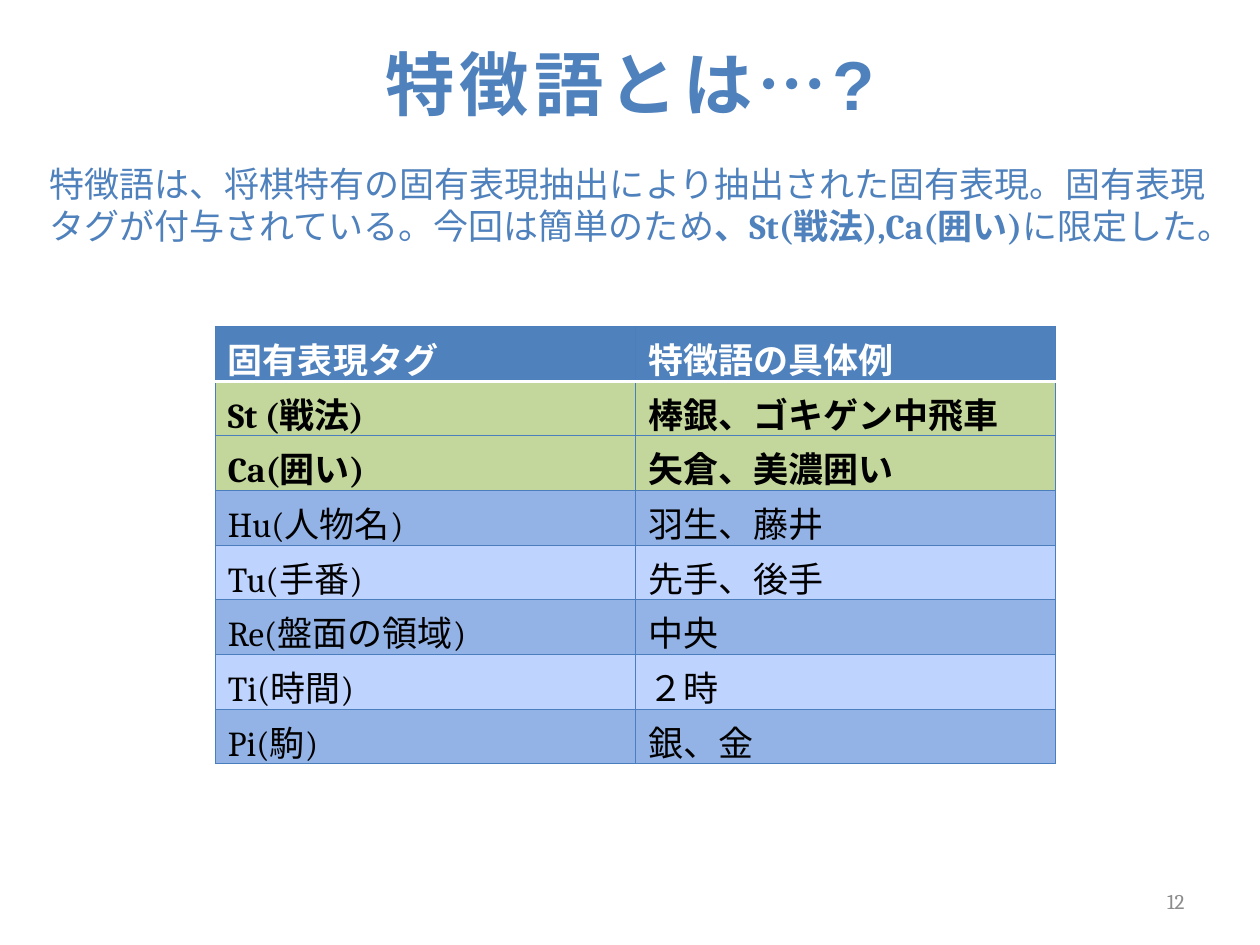
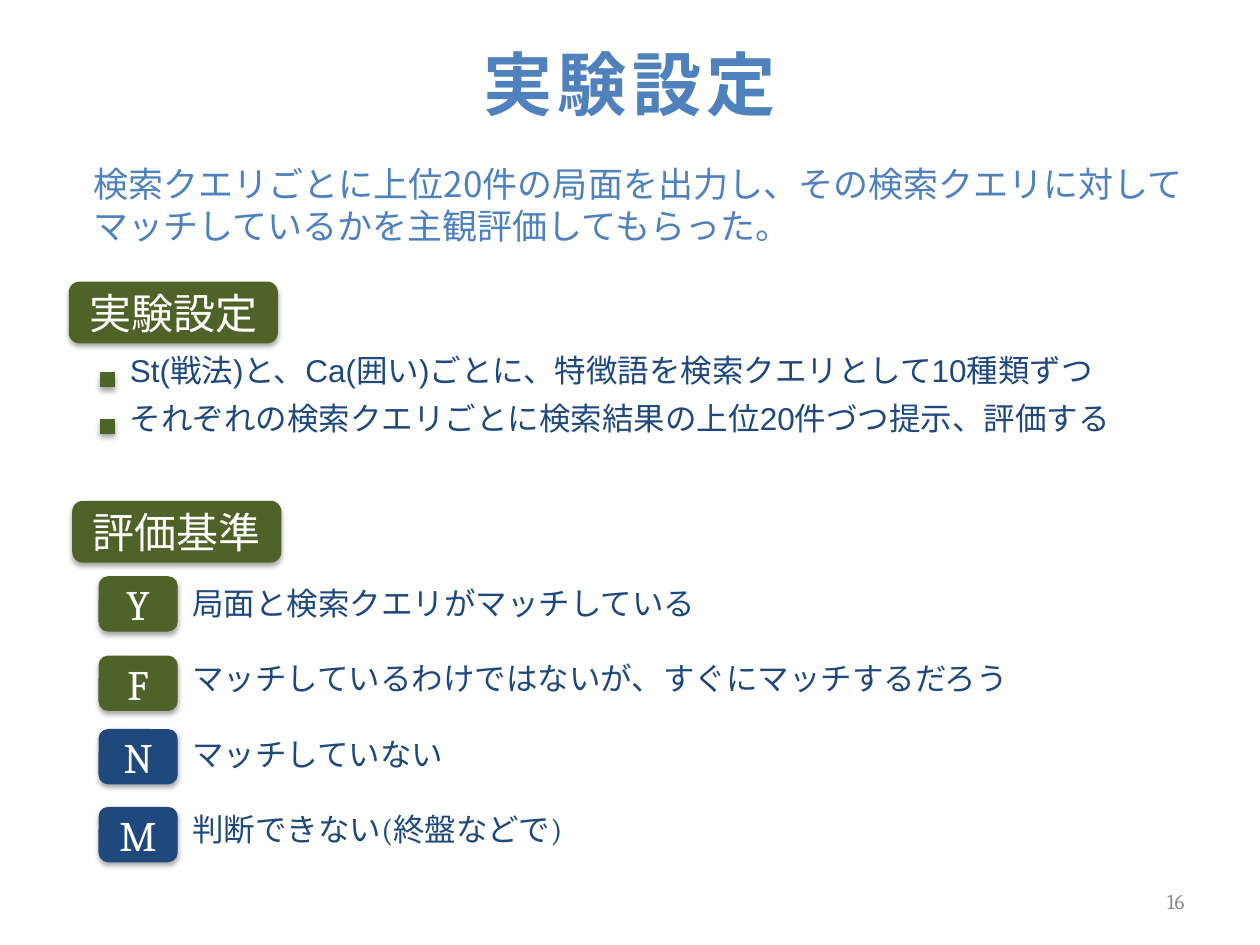
from dataclasses import dataclass

from lxml.etree import SubElement
from pptx import Presentation
from pptx.dml.color import RGBColor
from pptx.enum.lang import MSO_LANGUAGE_ID as Language
from pptx.enum.shapes import MSO_SHAPE as Shape
from pptx.enum.text import MSO_ANCHOR as Anchor, PP_ALIGN as Align
from pptx.oxml.ns import qn
from pptx.util import Cm, Pt


@dataclass(frozen=True)
class Theme:
    blue: str = "4F81BD"
    navy: str = "1F497D"
    green: str = "4F6228"
    light_green: str = "C3D69B"
    row_dark: str = "93B2E5"
    row_light: str = "BFD3FF"
    border: str = "4B7EBC"
    grey: str = "8C8C8C"
    white: str = "FFFFFF"
    black: str = "000000"
    serif: str = "Cambria"
    sans: str = "Arial"
    japanese: str = "Noto Sans CJK JP"
    title_size: float = 39.6
    label_size: float = 24
    body_size: float = 20
    list_size: float = 18
    number_size: float = 12


THEME = Theme()

# A paragraph is a list of (text, format overrides) spans.
TERMS_TITLE = [("特徴語とは", {}), ("…?", {"font": THEME.sans})]
TERMS_INTRO = [
    [("特徴語は、将棋特有の固有表現抽出により抽出された固有表現。固有表現", {})],
    [("タグが付与されている。今回は簡単のため", {}),
     ("、St(戦法),Ca(囲い)", {"bold": True}),
     ("に限定した。", {})],
]
TAG_ROWS = [
    ("固有表現タグ", "特徴語の具体例"),
    ("St (戦法)", "棒銀、ゴキゲン中飛車"),
    ("Ca(囲い)", "矢倉、美濃囲い"),
    ("Hu(人物名)", "羽生、藤井"),
    ("Tu(手番)", "先手、後手"),
    ("Re(盤面の領域)", "中央"),
    ("Ti(時間)", "２時"),
    ("Pi(駒)", "銀、金"),
]
CHOSEN_TAGS = 2

SETUP_TITLE = [("実験設定", {})]
SETUP_INTRO = [[(
    "検索クエリごとに上位20件の局面を出力し、その検索クエリに対して"
    "マッチしているかを主観評価してもらった。", {})]]
SECTIONS = [("実験設定", 1.4, 5.69), ("評価基準", 1.47, 10.11)]
SETTINGS = [
    "St(戦法)と、Ca(囲い)ごとに、特徴語を検索クエリとして10種類ずつ",
    "それぞれの検索クエリごとに検索結果の上位20件づつ提示、評価する",
]
CRITERIA = [
    ("Y", "局面と検索クエリがマッチしている", THEME.green, 11.63),
    ("F", "マッチしているわけではないが、すぐにマッチするだろう", THEME.green, 13.23),
    ("N", "マッチしていない", THEME.navy, 14.71),
    ("M", "判断できない(終盤などで)", THEME.navy, 16.28),
]


def rgb(color):
    return RGBColor.from_string(color)


def write(frame, paragraphs, *, align=Align.LEFT, anchor=Anchor.TOP, **base):
    """Fill a text frame; base formats every span, its overrides come on top."""
    frame.word_wrap = True
    frame.vertical_anchor = anchor
    if isinstance(paragraphs, str):
        paragraphs = [[(paragraphs, {})]]
    for index, spans in enumerate(paragraphs):
        para = frame.add_paragraph() if index else frame.paragraphs[0]
        para.alignment = align
        for text, overrides in spans:
            style = {"font": THEME.serif, "size": THEME.body_size, "bold": False,
                     "color": THEME.blue, "spacing": 0, **base, **overrides}
            span = para.add_run()
            span.text = text
            span.font.name = style["font"]
            span.font.size = Pt(style["size"])
            span.font.bold = style["bold"]
            span.font.color.rgb = rgb(style["color"])
            span.font.language_id = Language.JAPANESE
            if style["spacing"]:
                span.font._element.set("spc", str(style["spacing"] * 100))


def add_text(page, paragraphs, left, top, width, height, **style):
    box = page.shapes.add_textbox(Cm(left), Cm(top), Cm(width), Cm(height))
    write(box.text_frame, paragraphs, **style)


def add_block(page, kind, color, left, top, width, height, label=""):
    """Add a filled shape with a soft shadow below and an optional label."""
    block = page.shapes.add_shape(kind, Cm(left), Cm(top), Cm(width), Cm(height))
    block.fill.solid()
    block.fill.fore_color.rgb = rgb(color)
    block.line.color.rgb = rgb(color)
    block.line.width = Pt(0.75)
    block.shadow.inherit = False
    effects = block._element.spPr.find(qn("a:effectLst"))
    shadow = SubElement(effects, qn("a:outerShdw"), blurRad=str(Pt(3.1)),
                        dist=str(Pt(1.8)), dir="5400000", rotWithShape="0")
    shade = SubElement(shadow, qn("a:srgbClr"), val=THEME.black)
    SubElement(shade, qn("a:alpha"), val="35000")
    if label:
        write(block.text_frame, label, align=Align.CENTER, anchor=Anchor.MIDDLE,
              size=THEME.label_size, color=THEME.white)


def set_border(cell, side, color, width):
    line = SubElement(cell._tc.get_or_add_tcPr(), qn(f"a:{side}"), w=str(Pt(width)))
    SubElement(SubElement(line, qn("a:solidFill")), qn("a:srgbClr"), val=color)


def row_fill(row):
    if row == 0:
        return THEME.blue
    if row <= CHOSEN_TAGS:
        return THEME.light_green
    return THEME.row_dark if row % 2 else THEME.row_light


def add_tag_table(page, left, top, width, row_height):
    count = len(TAG_ROWS)
    table = page.shapes.add_table(count, 2, Cm(left), Cm(top), Cm(width),
                                  Cm(row_height * count)).table
    for row, texts in enumerate(TAG_ROWS):
        for column, text in enumerate(texts):
            cell = table.cell(row, column)
            write(cell.text_frame, text, bold=row <= CHOSEN_TAGS,
                  color=THEME.black if row else THEME.white)
            for side in ("lnL", "lnR", "lnT", "lnB"):
                under_header = (row, side) in ((0, "lnB"), (1, "lnT"))
                set_border(cell, side, THEME.white if under_header else THEME.border,
                           2 if under_header else 0.75)
            cell.fill.solid()
            cell.fill.fore_color.rgb = rgb(row_fill(row))


def add_page(deck, title, number):
    page = deck.slides.add_slide(deck.slide_layouts[6])
    add_text(page, [title], 1.27, 0.76, 22.86, 1.8, align=Align.CENTER,
             anchor=Anchor.MIDDLE, size=THEME.title_size, bold=True, spacing=3)
    add_text(page, number, 18.21, 17.65, 5.92, 1.02, align=Align.RIGHT,
             anchor=Anchor.MIDDLE, size=THEME.number_size, color=THEME.grey)
    return page


def build_terms(deck):
    page = add_page(deck, TERMS_TITLE, "12")
    add_text(page, TERMS_INTRO, 0.74, 3.15, 24.66, 1.96)
    add_tag_table(page, 4.34, 6.58, 16.94, 1.1)


def build_setup(deck):
    page = add_page(deck, SETUP_TITLE, "16")
    add_text(page, SETUP_INTRO, 1.63, 3.15, 22.5, 1.96, font=THEME.japanese)
    for label, left, top in SECTIONS:
        add_block(page, Shape.ROUNDED_RECTANGLE, THEME.green, left, top, 4.19, 1.22, label)

    item = {"anchor": Anchor.MIDDLE, "size": THEME.list_size, "color": THEME.navy}
    for index, text in enumerate(SETTINGS):
        add_block(page, Shape.RECTANGLE, THEME.green, 2.03, 7.52 + 0.94 * index, 0.28, 0.28)
        add_text(page, text, 2.37, 6.95 + 0.97 * index, 22, 1, font=THEME.sans, **item)
    for index, (grade, meaning, color, top) in enumerate(CRITERIA):
        add_block(page, Shape.ROUNDED_RECTANGLE, color, 2, top, 1.57, 1.09, grade)
        add_text(page, meaning, 3.63, 11.65 + 1.52 * index, 20, 1, **item)


def main():
    deck = Presentation()
    deck.slide_width, deck.slide_height = Cm(25.4), Cm(19.05)
    build_terms(deck)
    build_setup(deck)
    deck.save("out.pptx")


if __name__ == "__main__":
    main()
